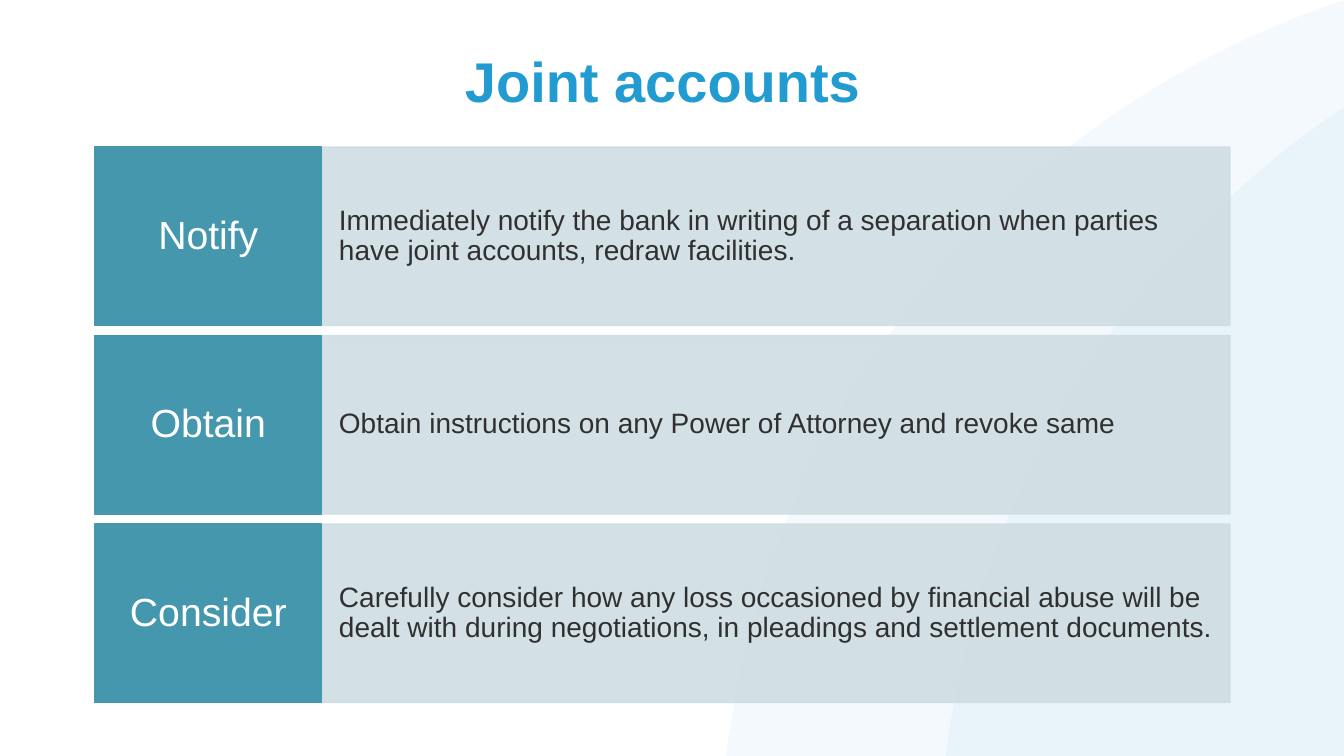
import dataclasses

import pptx
import pptx.dml.color
import pptx.enum.shapes
import pptx.enum.text
import pptx.oxml.ns
import pptx.util
from lxml import etree

SHAPE = pptx.enum.shapes.MSO_SHAPE
ALIGN = pptx.enum.text.PP_ALIGN
ANCHOR = pptx.enum.text.MSO_ANCHOR


@dataclasses.dataclass(frozen=True)
class Theme:
    font: str = "Arial"
    accent: str = "229CD0"
    label: str = "4597AD"
    panel: str = "CFDDE3"
    ink: str = "303030"
    white: str = "FFFFFF"
    title_size: int = 40
    label_size: int = 28
    body_size: int = 20
    line_spacing: float = 0.9
    circle_opacity: int = 5
    panel_opacity: int = 90


@dataclasses.dataclass(frozen=True)
class Grid:
    left: float = 0.94
    top: float = 1.46
    column: float = 2.252
    row: float = 1.77
    gap: float = 0.1

    def cell(self, column, row, span=1):
        return (self.left + column * self.column,
                self.top + row * (self.row + self.gap),
                span * self.column, self.row)


class SlideBuilder:
    def __init__(self, prs, theme, grid):
        self.theme = theme
        self.grid = grid
        self.slide = prs.slides.add_slide(prs.slide_layouts[6])

    def color(self, value):
        return pptx.dml.color.RGBColor.from_string(value)

    def shape(self, kind, box, fill, opacity=100, outlined=False):
        s = self.slide.shapes.add_shape(kind, *map(pptx.util.Inches, box))
        s.shadow.inherit = False
        s.fill.solid()
        s.fill.fore_color.rgb = self.color(fill)
        if outlined:
            s.line.color.rgb = self.color(fill)
            s.line.width = pptx.util.Pt(1)
        else:
            s.line.fill.background()
        if opacity < 100:
            qn = pptx.oxml.ns.qn
            for clr in s.element.spPr.iter(qn("a:srgbClr")):
                etree.SubElement(clr, qn("a:alpha"), val=str(opacity * 1000))
        return s

    def text(self, s, text, size, color, align, anchor, insets, bold=False):
        tf = s.text_frame
        tf.word_wrap = True
        tf.vertical_anchor = anchor
        tf.margin_left = tf.margin_right = pptx.util.Inches(insets[0])
        tf.margin_top = tf.margin_bottom = pptx.util.Inches(insets[1])
        p = tf.paragraphs[0]
        p.alignment = align
        p.line_spacing = self.theme.line_spacing
        r = p.add_run()
        r.text = text
        r.font.name = self.theme.font
        r.font.size = pptx.util.Pt(size)
        r.font.bold = bold
        r.font.color.rgb = self.color(color)

    def circle(self, left, top, diameter):
        self.shape(SHAPE.OVAL, (left, top, diameter, diameter),
                   self.theme.accent, self.theme.circle_opacity)

    def title(self, text):
        t, g = self.theme, self.grid
        box = (g.left, 0.49, 5 * g.column, 0.97)
        s = self.slide.shapes.add_textbox(*map(pptx.util.Inches, box))
        self.text(s, text, t.title_size, t.accent, ALIGN.CENTER,
                  ANCHOR.TOP, (0.1, 0.05), bold=True)

    def step(self, row, label, body):
        t = self.theme
        s = self.shape(SHAPE.RECTANGLE, self.grid.cell(1, row, span=4),
                       t.panel, t.panel_opacity, outlined=True)
        self.text(s, body, t.body_size, t.ink, ALIGN.LEFT,
                  ANCHOR.MIDDLE, (0.17, 0.45))
        s = self.shape(SHAPE.RECTANGLE, self.grid.cell(0, row),
                       t.label, outlined=True)
        self.text(s, label, t.label_size, t.white, ALIGN.CENTER,
                  ANCHOR.MIDDLE, (0.12, 0.17))


STEPS = [
    ("Notify", "Immediately notify the bank in writing of a separation when "
               "parties have joint accounts, redraw facilities."),
    ("Obtain", "Obtain instructions on any Power of Attorney and revoke same"),
    ("Consider", "Carefully consider how any loss occasioned by financial "
                 "abuse will be dealt with during negotiations, in pleadings "
                 "and settlement documents."),
]


def main():
    prs = pptx.Presentation()
    prs.slide_width = pptx.util.Inches(13.33)
    prs.slide_height = pptx.util.Inches(7.5)
    builder = SlideBuilder(prs, Theme(), Grid())
    for left in (7.14, 9.32):
        builder.circle(left, -0.45, 18.02)
    builder.title("Joint accounts")
    for row, (label, body) in enumerate(STEPS):
        builder.step(row, label, body)
    prs.save("out.pptx")


if __name__ == "__main__":
    main()
